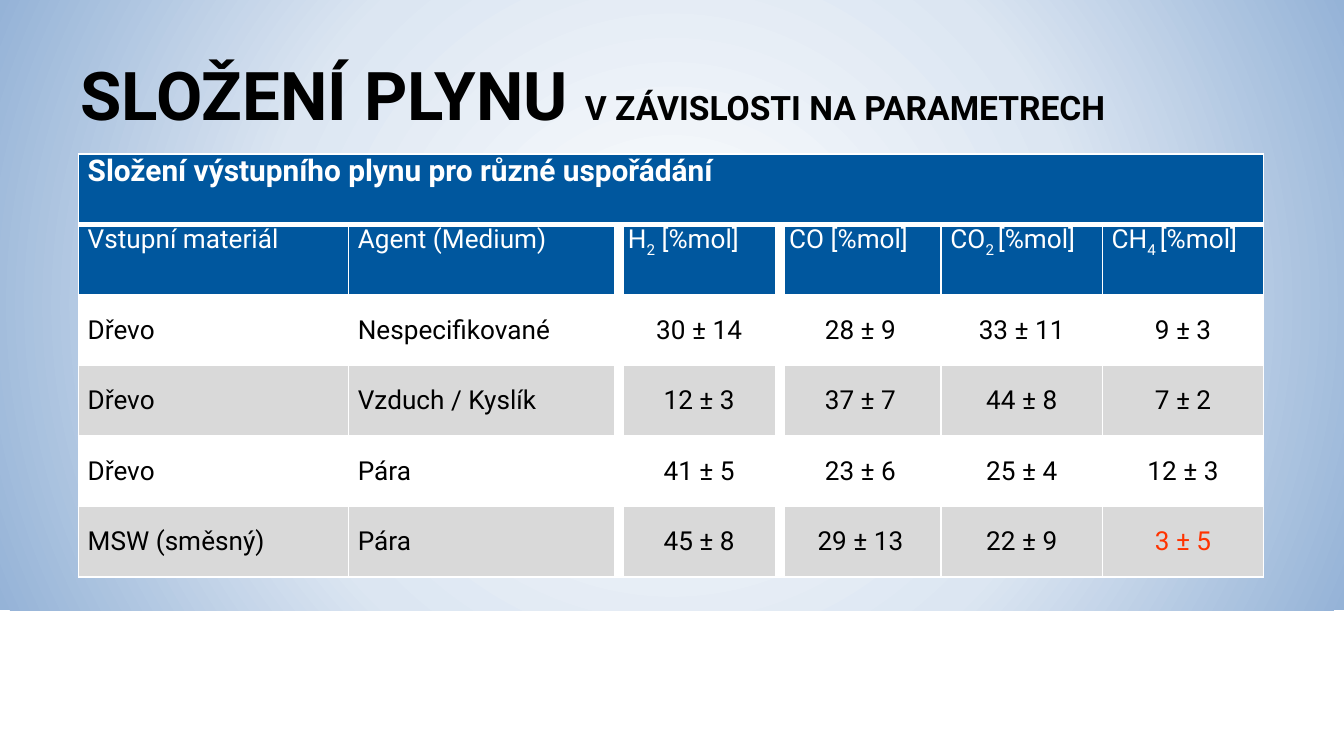
from pptx import Presentation
from pptx.dml.color import RGBColor
from pptx.enum.shapes import MSO_SHAPE
from pptx.enum.text import MSO_ANCHOR, PP_ALIGN
from pptx.oxml import parse_xml
from pptx.oxml.ns import nsdecls
from pptx.util import Pt

BLACK = RGBColor(0x00, 0x00, 0x00)
WHITE = RGBColor(0xFF, 0xFF, 0xFF)
PALE_BLUE = RGBColor(0xDC, 0xE6, 0xF2)
MID_BLUE = RGBColor(0x95, 0xB3, 0xD7)
HEADER_BLUE = RGBColor(0x00, 0x57, 0x9E)
GREY = RGBColor(0xD9, 0xD9, 0xD9)
RED = RGBColor(0xFF, 0x33, 0x00)
FONT = "Roboto"

TITLE_RUNS = [("SLOŽENÍ PLYNU ", 36), ("V ZÁVISLOSTI NA PARAMETRECH", 18)]
CAPTION = "Složení výstupního plynu pro různé uspořádání"
HEADINGS = [
    ["Vstupní materiál"],
    ["Agent (Medium)"],
    ["H", "2", " [%mol]"],
    ["CO [%mol]"],
    ["CO", "2 ", "[%mol]"],
    ["CH", "4 ", "[%mol]"],
]
MEASUREMENTS = [
    ["Dřevo", "Nespecifikované", "30 ± 14", "28 ± 9", "33 ± 11", "9 ± 3"],
    ["Dřevo", "Vzduch / Kyslík", "12 ± 3", "37 ± 7", "44 ± 8", "7 ± 2"],
    ["Dřevo", "Pára", "41 ± 5", "23 ± 6", "25 ± 4", "12 ± 3"],
    ["MSW (směsný)", "Pára", "45 ± 8", "29 ± 13", "22 ± 9", "3 ± 5"],
]
COLUMN_WIDTHS = [144.7, 144.7, 86.4, 86.4, 86.4, 86.4]
HYDROGEN_COLUMN = 2


def add_background(slide, left, top, width, height):
    """Draw the panel with a gradient spreading from its centre."""
    panel = slide.shapes.add_shape(MSO_SHAPE.RECTANGLE, left, top, width, height)
    panel.shadow.inherit = False
    panel.line.fill.background()
    panel.fill.gradient()
    stops = "".join(
        f'<a:gs pos="{position * 1000}"><a:srgbClr val="{color}"/></a:gs>'
        for position, color in [(0, WHITE), (56, PALE_BLUE), (100, MID_BLUE)]
    )
    gradient = parse_xml(
        f'<a:gradFill {nsdecls("a")} rotWithShape="1"><a:gsLst>{stops}</a:gsLst>'
        '<a:path path="circle"><a:fillToRect l="50000" t="50000" r="50000" b="50000"/>'
        "</a:path></a:gradFill>"
    )
    properties = panel.fill._xPr
    properties.replace(properties.gradFill, gradient)
    slide.shapes._spTree.insert(2, panel._element)


def add_title(slide, left, top, width, height):
    """Fill the title placeholder with a large and a small part."""
    title = slide.shapes.title
    title.left, title.top, title.width, title.height = left, top, width, height
    title.text_frame.vertical_anchor = MSO_ANCHOR.MIDDLE
    paragraph = title.text_frame.paragraphs[0]
    paragraph.alignment = PP_ALIGN.LEFT
    paragraph.font.name = FONT
    paragraph.font.bold = True
    paragraph.font.color.rgb = BLACK
    for text, size in TITLE_RUNS:
        run = paragraph.add_run()
        run.text = text
        run.font.size = Pt(size)


def set_borders(cell, left=1, right=1, top=1, bottom=1):
    """Give the cell white borders of the given widths in points."""
    properties = cell._tc.get_or_add_tcPr()
    for side, points in zip("LRTB", (left, right, top, bottom)):
        properties.append(parse_xml(
            f'<a:ln{side} {nsdecls("a")} w="{Pt(points)}"><a:solidFill>'
            f'<a:srgbClr val="{WHITE}"/></a:solidFill></a:ln{side}>'
        ))


def fill_cell(cell, parts, fill, color, size=14, bold=False,
              alignment=PP_ALIGN.JUSTIFY, anchor=MSO_ANCHOR.MIDDLE):
    """Write the parts into the cell, every second one as a subscript."""
    cell.fill.solid()
    cell.fill.fore_color.rgb = fill
    cell.margin_left = cell.margin_right = Pt(5)
    cell.margin_top = cell.margin_bottom = 0
    cell.vertical_anchor = anchor
    paragraph = cell.text_frame.paragraphs[0]
    paragraph.alignment = alignment
    paragraph.space_after = Pt(6)
    font = paragraph.font
    font.name, font.size, font.bold = FONT, Pt(size), bold
    font.color.rgb = color
    for index, text in enumerate(parts):
        run = paragraph.add_run()
        run.text = text
        if index % 2:
            run.font._element.set("baseline", "-25000")


def add_gas_table(slide, left, top, width, height):
    """Add the table of gas composition by input material and agent."""
    row_count = len(MEASUREMENTS) + 2
    column_count = len(HEADINGS)
    table = slide.shapes.add_table(
        row_count, column_count, left, top, width, height).table
    table.first_row = table.horz_banding = False
    for column, column_width in zip(table.columns, COLUMN_WIDTHS):
        column.width = Pt(column_width)
    for row in table.rows:
        row.height = int(height / row_count)

    for column in range(column_count):
        set_borders(table.cell(0, column), bottom=3)
    caption = table.cell(0, 0)
    caption.merge(table.cell(0, column_count - 1))
    fill_cell(caption, [CAPTION], HEADER_BLUE, WHITE, size=16, bold=True,
              anchor=MSO_ANCHOR.TOP)

    for row in range(1, row_count):
        for column in range(column_count):
            cell = table.cell(row, column)
            set_borders(
                cell,
                left=6 if column in (HYDROGEN_COLUMN, HYDROGEN_COLUMN + 1) else 1,
                right=6 if column in (HYDROGEN_COLUMN - 1, HYDROGEN_COLUMN) else 1,
                top=3 if row == 1 else 1,
            )
            if row == 1:
                fill_cell(cell, HEADINGS[column], HEADER_BLUE, WHITE,
                          anchor=MSO_ANCHOR.TOP)
                continue
            is_last = row == row_count - 1 and column == column_count - 1
            fill_cell(
                cell,
                [MEASUREMENTS[row - 2][column]],
                GREY if row % 2 else WHITE,
                RED if is_last else BLACK,
                alignment=(PP_ALIGN.CENTER if column >= HYDROGEN_COLUMN
                           else PP_ALIGN.JUSTIFY),
            )


def main():
    """Build the slide and save the presentation."""
    presentation = Presentation()
    presentation.slide_width, presentation.slide_height = Pt(720), Pt(405)
    slide = presentation.slides.add_slide(presentation.slide_layouts[5])
    add_background(slide, 0, 0, Pt(720), Pt(327))
    add_title(slide, Pt(36), Pt(16.5), Pt(648), Pt(67.5))
    add_gas_table(slide, Pt(42), Pt(82.5), Pt(635), Pt(226.8))
    presentation.save("out.pptx")


if __name__ == "__main__":
    main()
